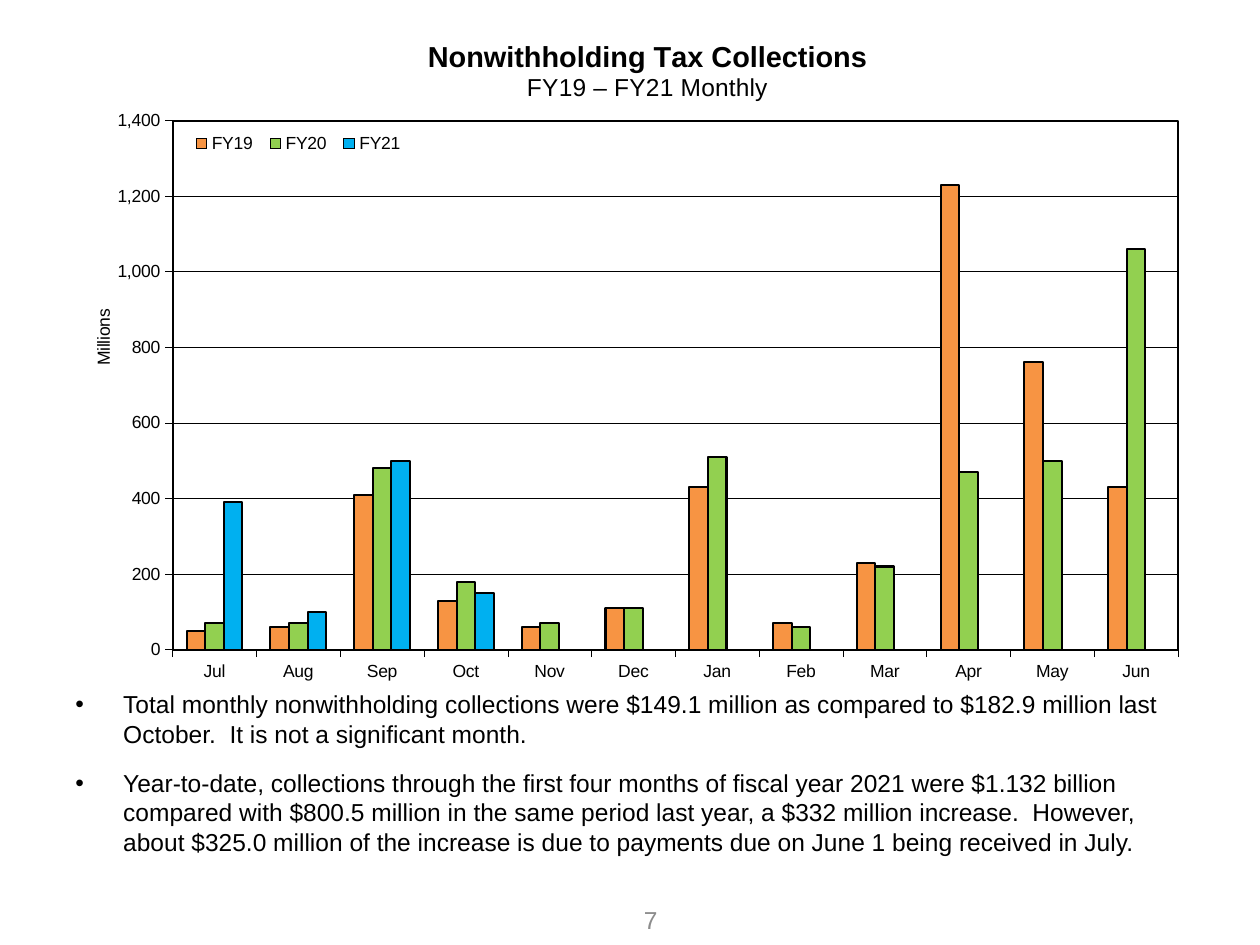
from pptx import Presentation
from pptx.util import Inches, Pt
from pptx.dml.color import RGBColor
from pptx.chart.data import CategoryChartData
from pptx.enum.chart import XL_CHART_TYPE, XL_LEGEND_POSITION, XL_TICK_MARK
from pptx.enum.text import PP_ALIGN, MSO_ANCHOR
from pptx.oxml import parse_xml
from pptx.oxml.ns import nsdecls, qn
from lxml import etree

BLACK = "000000"
MONTHS = "Jul Aug Sep Oct Nov Dec Jan Feb Mar Apr May Jun".split()
YEARS = [
    ("FY19", "F79443", [50, 60, 410, 130, 60, 110, 430, 70, 230, 1230, 760, 430]),
    ("FY20", "92D050", [70, 70, 480, 180, 70, 110, 510, 60, 220, 470, 500, 1060]),
    ("FY21", "00B0F0", [390, 100, 500, 150] + [None] * 8),
]
HEADS = [("Nonwithholding Tax Collections", 16.5, True), ("FY19 – FY21 Monthly", 14, False)]
POINTS = [
    "Total monthly nonwithholding collections were $149.1 million as compared to "
    "$182.9 million last October.  It is not a significant month.",
    "Year-to-date, collections through the first four months of fiscal year 2021 were "
    "$1.132 billion compared with $800.5 million in the same period last year, a $332 "
    "million increase.  However, about $325.0 million of the increase is due to payments "
    "due on June 1 being received in July.",
]


def color(code):
    return RGBColor.from_string(code)


def style(font, size, bold=False, code=BLACK):
    font.name = "Arial"
    font.size = Pt(size)
    font.bold = bold
    font.color.rgb = color(code)


def stroke(line, width):
    line.color.rgb = color(BLACK)
    line.width = Pt(width)


def place(node, x, y, size=None, inner=False):
    for old in node.findall(qn("c:layout")):
        node.remove(old)
    tags = '<c:layoutTarget val="inner"/>' if inner else ""
    tags += f'<c:xMode val="edge"/><c:yMode val="edge"/><c:x val="{x}"/><c:y val="{y}"/>'
    if size:
        tags += f'<c:w val="{size[0]}"/><c:h val="{size[1]}"/>'
    layout = parse_xml(
        f'<c:layout {nsdecls("c")}><c:manualLayout>{tags}</c:manualLayout></c:layout>')
    over = node.find(qn("c:overlay"))
    if over is None:
        node.insert(0, layout)
    else:
        over.addprevious(layout)


def add_head(frame, heads):
    for i, (words, size, bold) in enumerate(heads):
        para = frame.add_paragraph() if i else frame.paragraphs[0]
        para.text = words
        para.alignment = PP_ALIGN.CENTER
        style(para.runs[0].font, size, bold)


def style_axes(chart):
    for axis in (chart.category_axis, chart.value_axis):
        style(axis.tick_labels.font, 10)
        stroke(axis.format.line, 0.29)
        axis.major_tick_mark = XL_TICK_MARK.OUTSIDE
        axis.minor_tick_mark = XL_TICK_MARK.NONE
    axis = chart.value_axis
    axis.minimum_scale, axis.maximum_scale, axis.major_unit = 0, 1400, 200
    axis.tick_labels.number_format = "#,##0"
    axis.tick_labels.number_format_is_linked = False
    axis.has_major_gridlines = True
    stroke(axis.major_gridlines.format.line, 0.29)
    add_head(axis.axis_title.text_frame, [("Millions", 10, False)])


def frame_plot(area):
    area.append(parse_xml(
        f'<c:spPr {nsdecls("c", "a")}><a:noFill/><a:ln w="{Pt(1.15)}"><a:solidFill>'
        f'<a:srgbClr val="{BLACK}"/></a:solidFill></a:ln></c:spPr>'))


def add_bars(slide, left, top, width, height):
    data = CategoryChartData(number_format="#,##0")
    data.categories = MONTHS
    for name, _, values in YEARS:
        data.add_series(name, values)
    chart = slide.shapes.add_chart(
        XL_CHART_TYPE.COLUMN_CLUSTERED, left, top, width, height, data).chart
    style(chart.font, 10)
    chart.has_title = True
    add_head(chart.chart_title.text_frame, HEADS)
    style_axes(chart)
    plot = chart.plots[0]
    plot.gap_width, plot.overlap, plot.vary_by_categories = 150, 0, False
    for series, (_, code, _) in zip(plot.series, YEARS):
        series.format.fill.solid()
        series.format.fill.fore_color.rgb = color(code)
        stroke(series.format.line, 1.15)
    chart.has_legend = True
    chart.legend.position = XL_LEGEND_POSITION.RIGHT
    chart.legend.include_in_layout = False
    style(chart.legend.font, 10)
    area, head, side, key = (chart.element.xpath(query)[0] for query in (
        "//c:plotArea", "//c:chart/c:title", "//c:valAx/c:title", "//c:legend"))
    place(area, 0.1, 0.15, (0.84, 0.8), inner=True)
    place(head, 0.31, 0.02)
    place(side, 0.03, 0.43)
    place(key, 0.11, 0.16, (0.19, 0.05))
    frame_plot(area)


def add_points(slide, left, top, width, height):
    frame = slide.shapes.add_textbox(left, top, width, height).text_frame
    frame.word_wrap = True
    for i, words in enumerate(POINTS):
        para = frame.add_paragraph() if i else frame.paragraphs[0]
        para.text = words
        para.space_before = Pt(11.5 if i else 0)
        style(para.runs[0].font, 14)
        props = para._p.get_or_add_pPr()
        props.set("marL", str(Inches(0.38)))
        props.set("indent", str(-Inches(0.38)))
        etree.SubElement(props, qn("a:buFont")).set("typeface", "Arial")
        etree.SubElement(props, qn("a:buChar")).set("char", "•")


def add_page(slide, left, top, width, height):
    frame = slide.shapes.add_textbox(left, top, width, height).text_frame
    frame.word_wrap = True
    frame.vertical_anchor = MSO_ANCHOR.MIDDLE
    para = frame.paragraphs[0]
    para.text = "7"
    para.alignment = PP_ALIGN.CENTER
    style(para.runs[0].font, 14, code="8C8C8C")


def main():
    deck = Presentation()
    deck.slide_width, deck.slide_height = Inches(10), Inches(7.5)
    slide = deck.slides.add_slide(deck.slide_layouts[6])
    add_bars(slide, Inches(0.42), Inches(0.17), Inches(9.5), Inches(5.25))
    add_points(slide, Inches(0.5), Inches(5.42), Inches(9), Inches(1.67))
    add_page(slide, Inches(4), Inches(7.1), Inches(2.33), Inches(0.4))
    deck.save("out.pptx")


if __name__ == "__main__":
    main()
